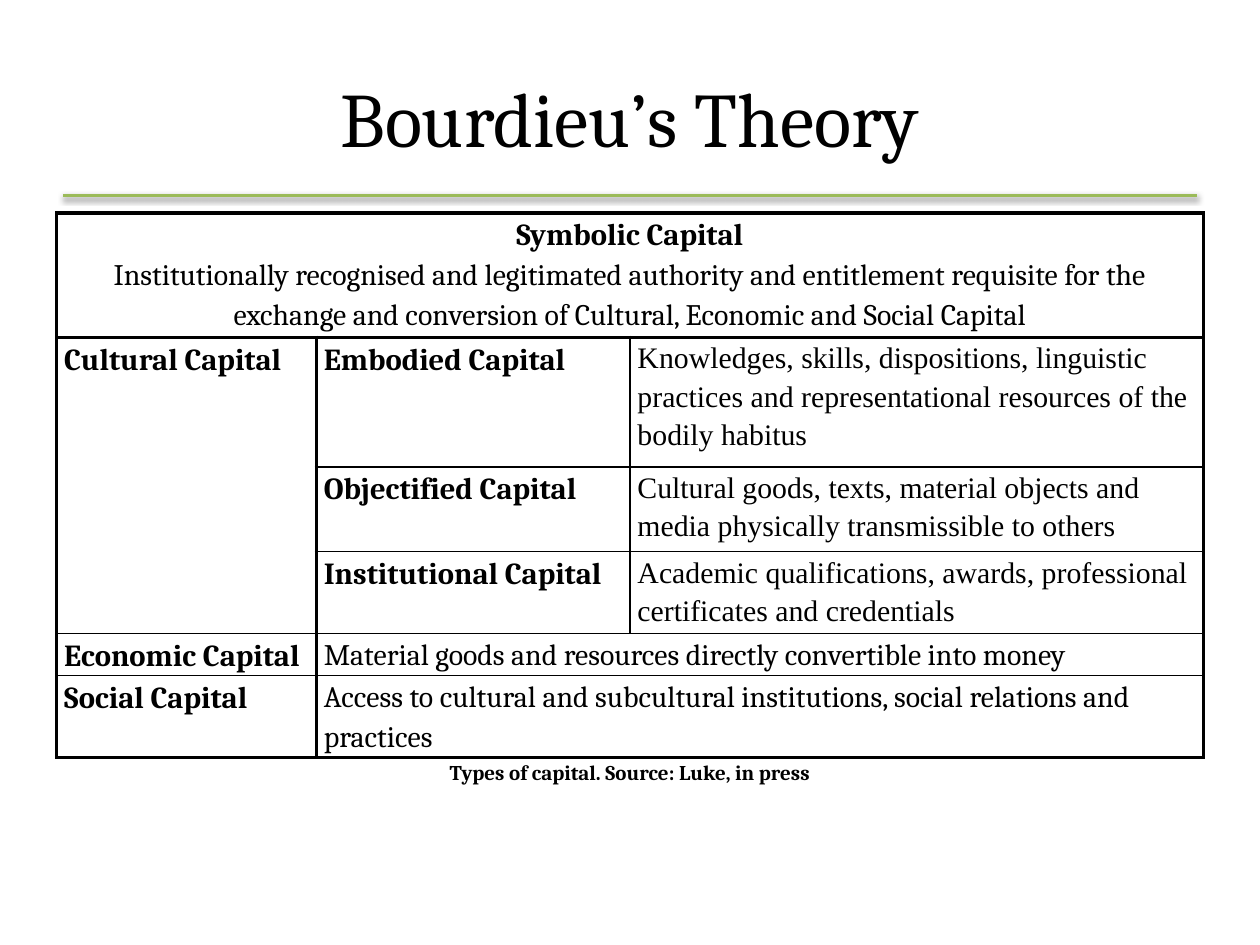
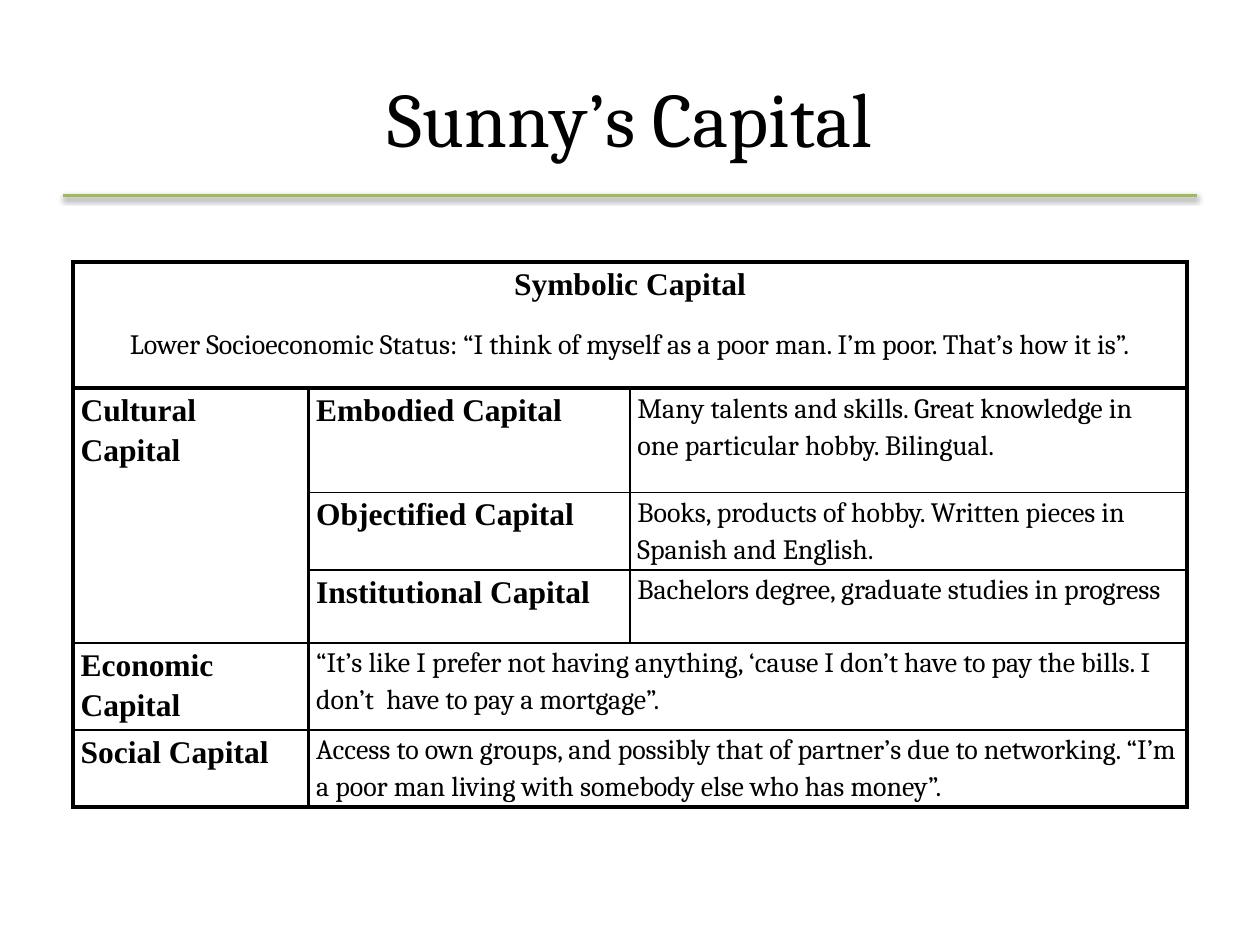
import dataclasses

import pptx
import pptx.dml.color
import pptx.enum.shapes
import pptx.enum.text
import pptx.oxml
import pptx.oxml.ns
import pptx.util
from pptx.util import Inches

ALIGN = pptx.enum.text.PP_ALIGN
NO_STYLE = "{2D5ABB26-0587-4C30-8999-92F81FD0307C}"


@dataclasses.dataclass(frozen=True)
class Theme:
    ink: str = "000000"
    rule: str = "9BBB59"
    serif: str = "Cambria"
    roman: str = "Times New Roman"
    title: float = 44
    note: float = 12
    thick: float = 2.25
    thin: float = 1
    lead: float = 1.15
    pad: float = 0.06


@dataclasses.dataclass(frozen=True)
class Type:
    """Fonts and sizes of one table: labels, body text and detail column."""
    label: tuple
    body: tuple
    detail: tuple
    gap: float = 0


def write(para, text, font, size, color, bold=False, align=ALIGN.LEFT,
          lead=None, before=0):
    run = para.add_run()
    run.text = text
    run.font.name = font
    run.font.size = pptx.util.Pt(size)
    run.font.bold = bold
    run.font.color.rgb = pptx.dml.color.RGBColor.from_string(color)
    para.alignment = align
    if lead:
        para.line_spacing = lead
    if before:
        para.space_before = pptx.util.Pt(before)


def parse_xml(body):
    return pptx.oxml.parse_xml(body.replace(">", f" {pptx.oxml.ns.nsdecls('a')}>", 1))


class Deck:
    def __init__(self, theme):
        self.theme = theme
        self.prs = pptx.Presentation()
        self.prs.slide_width = Inches(10)
        self.prs.slide_height = Inches(7.5)
        self.slide = None

    def page(self, title):
        """Start a slide with the shared rule and title."""
        self.slide = self.prs.slides.add_slide(self.prs.slide_layouts[6])
        self.rule(0.5, 9.5, 1.55)
        self.text(title, 0.5, 0.3, 9, 1.25, size=self.theme.title)

    def rule(self, left, right, top):
        line = self.slide.shapes.add_connector(
            pptx.enum.shapes.MSO_CONNECTOR.STRAIGHT,
            Inches(left), Inches(top), Inches(right), Inches(top))
        line.line.width = pptx.util.Pt(2)
        line.line.color.rgb = pptx.dml.color.RGBColor.from_string(self.theme.rule)
        line._element.spPr.append(parse_xml(
            '<a:effectLst><a:outerShdw blurRad="40000" dist="20000" dir="5400000" '
            f'rotWithShape="0"><a:srgbClr val="{self.theme.ink}">'
            '<a:alpha val="38000"/></a:srgbClr></a:outerShdw></a:effectLst>'))

    def text(self, text, left, top, width, height, size, bold=False):
        box = self.slide.shapes.add_textbox(
            Inches(left), Inches(top), Inches(width), Inches(height))
        frame = box.text_frame
        frame.word_wrap = True
        frame.vertical_anchor = pptx.enum.text.MSO_ANCHOR.MIDDLE
        write(frame.paragraphs[0], text, self.theme.serif, size,
              self.theme.ink, bold=bold, align=ALIGN.CENTER)

    def table(self, left, top, cols, rows, words, kind):
        """Draw the capital table; words maps (row, column) to cell text."""
        grid = self.slide.shapes.add_table(
            len(rows), len(cols), Inches(left), Inches(top),
            Inches(sum(cols)), Inches(sum(rows))).table
        grid.first_row = grid.horz_banding = False
        grid._tbl.tblPr.find(pptx.oxml.ns.qn("a:tableStyleId")).text = NO_STYLE
        for col, width in zip(grid.columns, cols):
            col.width = Inches(width)
        for row, height in zip(grid.rows, rows):
            row.height = Inches(height)
        for start, end in (((0, 0), (0, 2)), ((1, 0), (3, 0)),
                           ((4, 1), (4, 2)), ((5, 1), (5, 2))):
            grid.cell(*start).merge(grid.cell(*end))
        for row in range(len(rows)):
            for col in range(len(cols)):
                cell = grid.cell(row, col)
                self.edge(cell, row, col, len(rows), len(cols))
                cell.fill.background()
                cell.margin_left = cell.margin_right = Inches(self.theme.pad)
                cell.margin_top = cell.margin_bottom = 0
                if (row, col) in words:
                    self.fill(cell, row, col, words[row, col], kind)

    def fill(self, cell, row, col, text, kind):
        frame = cell.text_frame
        look = dict(color=self.theme.ink, lead=self.theme.lead)
        if row == 0:
            look["align"] = ALIGN.CENTER
            head, body = text
            write(frame.paragraphs[0], head, *kind.label, bold=True, **look)
            write(frame.add_paragraph(), body, *kind.body, before=kind.gap, **look)
            return
        label = col == 0 or (col == 1 and row < 4)
        font = kind.label if label else kind.detail if col == 2 else kind.body
        write(frame.paragraphs[0], text, *font, bold=label, **look)

    def edge(self, cell, row, col, high, wide):
        """Heavy frame, header line and first column line; thin elsewhere."""
        right, low = col + 1, row + 1
        if cell.is_merge_origin:
            right, low = col + cell.span_width, row + cell.span_height
        heavy = {"L": col == 0 or (col == 1 and row > 0),
                 "R": right == wide or (right == 1 and row > 0),
                 "T": row in (0, 1), "B": low in (1, high)}
        props = cell._tc.get_or_add_tcPr()
        for side, thick in heavy.items():
            if cell.is_spanned and not thick:
                continue
            width = pptx.util.Pt(self.theme.thick if thick else self.theme.thin)
            props.append(parse_xml(
                f'<a:ln{side} w="{int(width)}"><a:solidFill>'
                f'<a:srgbClr val="{self.theme.ink}"/></a:solidFill></a:ln{side}>'))


LABELS = {
    (1, 0): "Cultural Capital", (4, 0): "Economic Capital",
    (5, 0): "Social Capital", (1, 1): "Embodied Capital",
    (2, 1): "Objectified Capital", (3, 1): "Institutional Capital",
}


def words(status, *texts):
    """Join the shared labels with one slide's own texts."""
    slots = ((1, 2), (2, 2), (3, 2), (4, 1), (5, 1))
    return {(0, 0): ("Symbolic Capital", status), **LABELS, **dict(zip(slots, texts))}


def main():
    theme = Theme()
    deck = Deck(theme)

    deck.page("Bourdieu’s Theory")
    deck.table(
        0.45, 1.69, (2.06, 2.49, 4.55), (0.96, 1.03, 0.67, 0.64, 0.32, 0.63),
        words(
            "Institutionally recognised and legitimated authority and entitlement "
            "requisite for the exchange and conversion of Cultural, Economic and "
            "Social Capital",
            "Knowledges, skills, dispositions, linguistic practices and "
            "representational resources of the bodily habitus",
            "Cultural goods, texts, material objects and media physically "
            "transmissible to others",
            "Academic qualifications, awards, professional certificates and credentials",
            "Material goods and resources directly convertible into money",
            "Access to cultural and subcultural institutions, social relations "
            "and practices"),
        Type((theme.serif, 17.5), (theme.serif, 17), (theme.roman, 17)))
    deck.text("Types of capital. Source: Luke, in press",
              0.45, 5.98, 9.1, 0.3, size=theme.note, bold=True)

    deck.page("Sunny’s Capital")
    deck.table(
        0.58, 2.08, (1.87, 2.55, 4.42), (1, 0.83, 0.59, 0.58, 0.64, 0.59),
        words(
            "Lower Socioeconomic Status: “I think of myself as a poor man. "
            "I’m poor. That’s how it is”.",
            "Many talents and skills. Great knowledge in one particular hobby. "
            "Bilingual.",
            "Books, products of hobby. Written pieces in Spanish and English.",
            "Bachelors degree, graduate studies in progress",
            "“It’s like I prefer not having anything, ‘cause I don’t have to pay "
            "the bills. I don’t  have to pay a mortgage”.",
            "Access to own groups, and possibly that of partner’s due to "
            "networking. “I’m a poor man living with somebody else who has money”."),
        Type((theme.roman, 18), (theme.serif, 16), (theme.serif, 16), gap=13))

    deck.prs.save("out.pptx")


if __name__ == "__main__":
    main()
